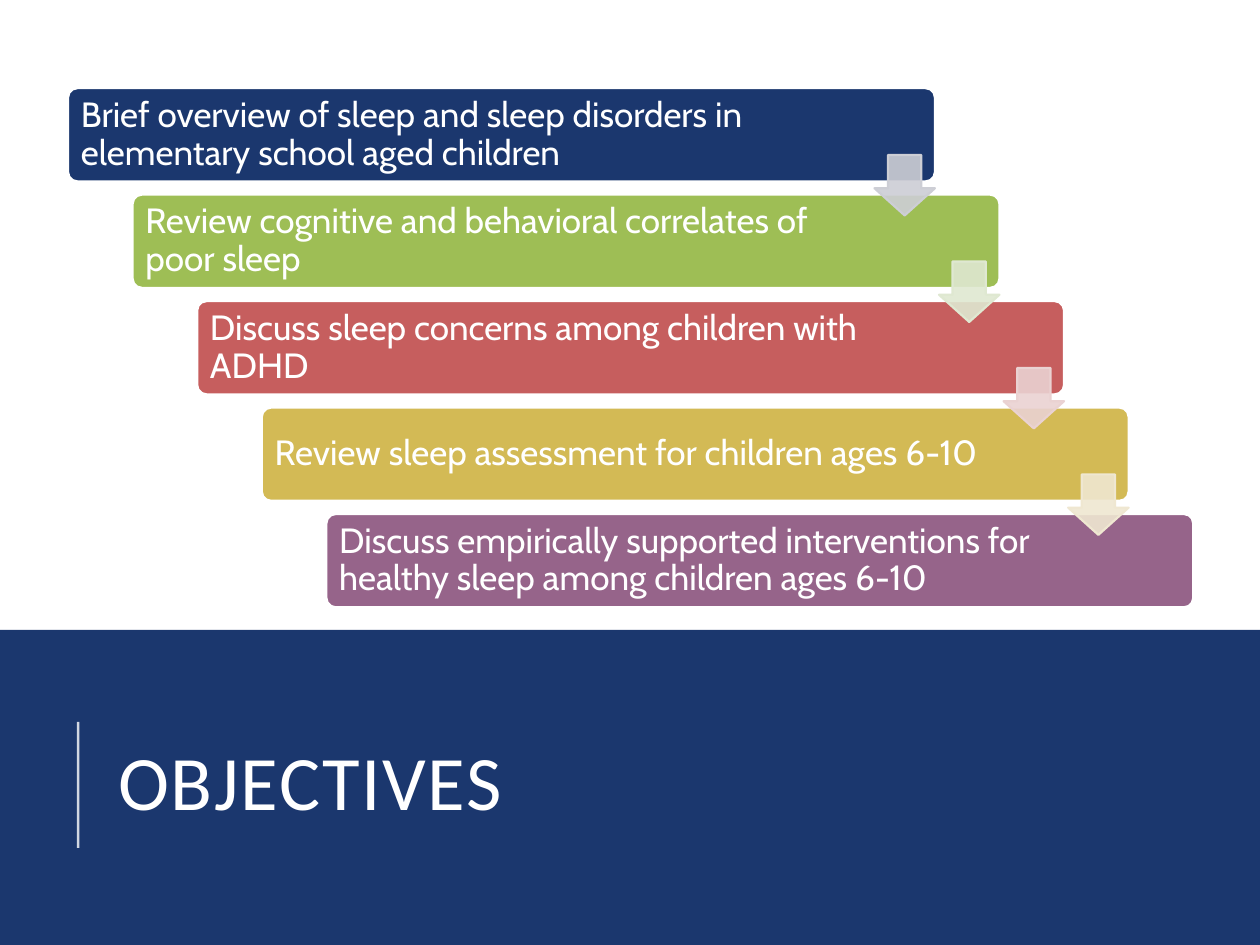
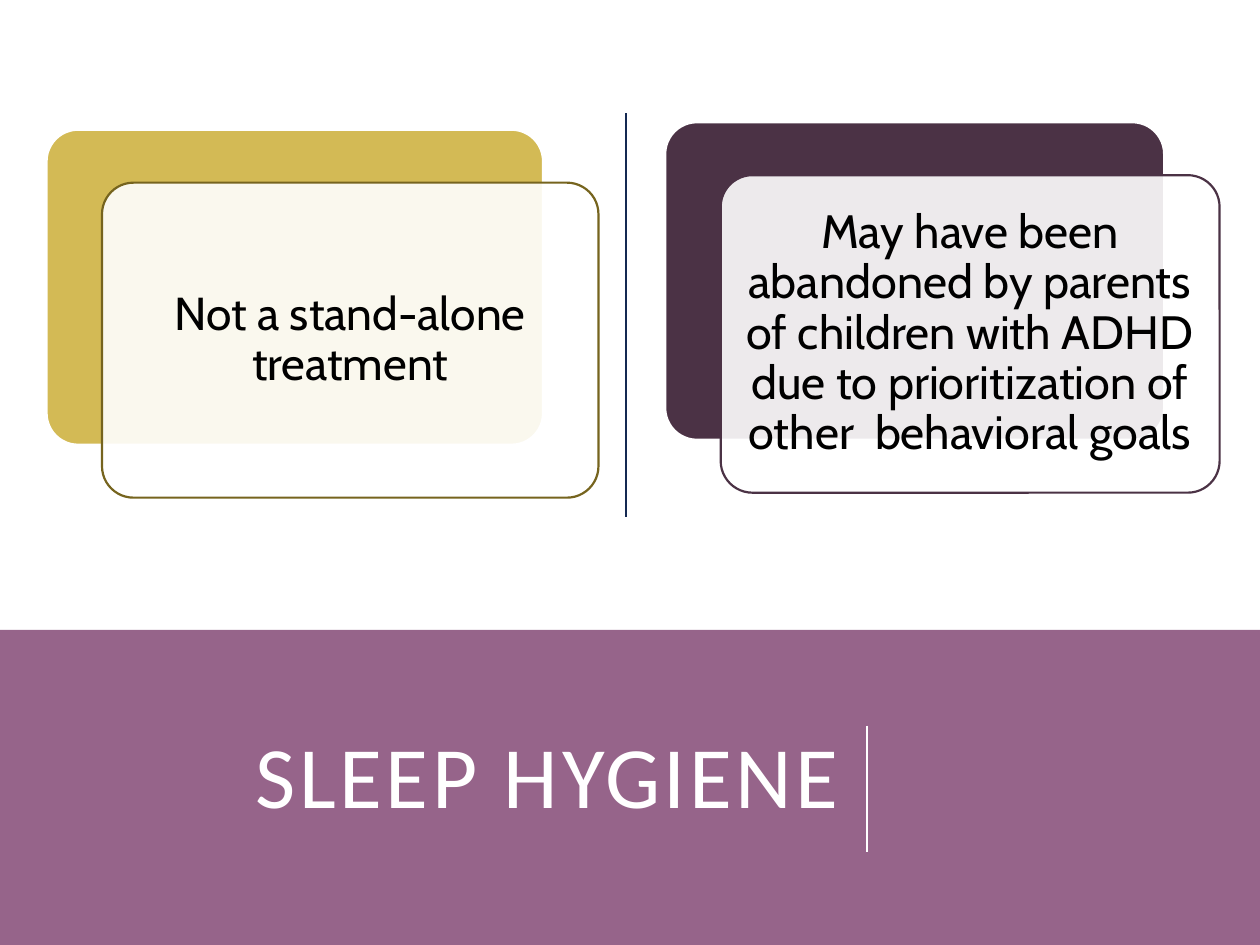
from lxml import etree
from pptx import Presentation
from pptx.dml.color import RGBColor
from pptx.enum.shapes import MSO_CONNECTOR, MSO_SHAPE
from pptx.enum.text import MSO_ANCHOR, PP_ALIGN
from pptx.oxml.ns import qn
from pptx.util import Inches, Pt

RECT, ROUNDED, ARROW = MSO_SHAPE.RECTANGLE, MSO_SHAPE.ROUNDED_RECTANGLE, MSO_SHAPE.DOWN_ARROW
LEFT, CENTER, RIGHT = PP_ALIGN.LEFT, PP_ALIGN.CENTER, PP_ALIGN.RIGHT
MIDDLE = MSO_ANCHOR.MIDDLE
STRAIGHT = MSO_CONNECTOR.STRAIGHT

WHITE, BLACK = "FFFFFF", "000000"
NAVY, DARK_NAVY, GREEN, RED = "1B376E", "142952", "9EBE55", "C65E5E"
GOLD, DARK_GOLD, PURPLE, PLUM = "D3BA55", "76641E", "96648A", "4B3245"
BODY_FONT, TITLE_FONT = "Cabin", "Calibri"
SLIDE_W, SLIDE_H, BAND_TOP = 10, 7.5, 5

# text, bar colour, colour of the arrow to the next step
OBJECTIVES = [
    ("Brief overview of sleep and sleep disorders in elementary school aged children", NAVY, "CDCED5"),
    ("Review cognitive and behavioral correlates of poor sleep", GREEN, "DFE8D1"),
    ("Discuss sleep concerns among children with ADHD", RED, "EAD2D2"),
    ("Review sleep assessment for children ages 6-10", GOLD, "EFE7D1"),
    ("Discuss empirically supported interventions for healthy sleep among children ages 6-10", PURPLE, None),
]
FIRST_BAR, LAST_BAR = (0.54, 0.7), (2.59, 4.08)
BAR_W, BAR_H, ARROW_SIZE = 6.88, 0.74, 0.48

# text, size, left, top, width, height, back colour, outline colour
CARDS = [
    ("Not a stand-alone treatment", 26.4, 0.37, 1.03, 3.94, 2.5, GOLD, DARK_GOLD),
    ("May have been abandoned by parents of children with ADHD due to "
     "prioritization of other  behavioral goals", 26.7, 5.28, 0.97, 3.96, 2.52, PLUM, PLUM),
]
CARD_SHIFT_X, CARD_SHIFT_Y = 0.44, 0.42


def rgb(color):
    return RGBColor.from_string(color)


def set_alpha(fill, percent):
    color = fill._xPr.find(qn("a:solidFill"))[0]
    etree.SubElement(color, qn("a:alpha")).set("val", str(percent * 1000))


def add_box(slide, kind, x, y, w, h, fill, line=None, alpha=100, adjust=()):
    sp = slide.shapes.add_shape(kind, Inches(x), Inches(y), Inches(w), Inches(h))
    sp.shadow.inherit = False
    for i, value in enumerate(adjust):
        sp.adjustments[i] = value
    sp.fill.solid()
    sp.fill.fore_color.rgb = rgb(fill)
    if line:
        sp.line.color.rgb = rgb(line)
        sp.line.width = Pt(1.25)
    else:
        sp.line.fill.background()
    if alpha < 100:
        set_alpha(sp.fill, alpha)
    return sp


def write(sp, text, size, color=WHITE, font=BODY_FONT, align=LEFT, leading=0.9,
          tracking=0, insets=(0.1, 0.05, 0.1, 0.05)):
    """Fill a shape with one paragraph; insets run left, top, right, bottom."""
    tf = sp.text_frame
    tf.word_wrap = True
    tf.vertical_anchor = MIDDLE
    tf.margin_left, tf.margin_top, tf.margin_right, tf.margin_bottom = map(Inches, insets)
    p = tf.paragraphs[0]
    p.alignment = align
    p.line_spacing = leading
    r = p.add_run()
    r.text = text
    r.font.name = font
    r.font.size = Pt(size)
    r.font.color.rgb = rgb(color)
    if tracking:
        r.font._element.set("spc", str(tracking * 100))


def add_rule(slide, x, top, bottom, color, alpha=100):
    line = slide.shapes.add_connector(STRAIGHT, Inches(x), Inches(top), Inches(x), Inches(bottom))
    line.line.color.rgb = rgb(color)
    line.line.width = Pt(1.5)
    if alpha < 100:
        set_alpha(line.line.fill, alpha)
    etree.SubElement(line._element.spPr, qn("a:effectLst"))


def add_title_band(slide, title, color, box, rule_x, rule_top, rule_alpha=100, **style):
    add_box(slide, RECT, 0, BAND_TOP, SLIDE_W, SLIDE_H - BAND_TOP, color)
    write(slide.shapes.add_textbox(*map(Inches, box)), title,
          font=TITLE_FONT, leading=0.8, **style)
    add_rule(slide, rule_x, rule_top, rule_top + 1, WHITE, rule_alpha)


def add_objectives(slide):
    """Staircase of bars, drawn from the bottom so each arrow overlaps the next bar."""
    steps = len(OBJECTIVES) - 1
    for i, (text, color, arrow_color) in reversed(list(enumerate(OBJECTIVES))):
        x, y = (a + (b - a) * i / steps for a, b in zip(FIRST_BAR, LAST_BAR))
        bar = add_box(slide, ROUNDED, x, y, BAR_W, BAR_H, color, WHITE, adjust=[0.1])
        write(bar, text, 20, insets=(0.08, 0.08, 1.08, 0.08))
        if arrow_color:
            add_box(slide, ARROW, x + BAR_W - ARROW_SIZE, y + 0.53, ARROW_SIZE, ARROW_SIZE,
                    arrow_color, arrow_color, alpha=90, adjust=[0.55, 0.45])


def add_cards(slide):
    for text, size, x, y, w, h, back, outline in CARDS:
        add_box(slide, ROUNDED, x, y, w, h, back, WHITE, adjust=[0.1])
        card = add_box(slide, ROUNDED, x + CARD_SHIFT_X, y + CARD_SHIFT_Y, w, h,
                       WHITE, outline, alpha=90, adjust=[0.1])
        write(card, text, size, BLACK, align=CENTER, insets=(0.1,) * 4)


def main():
    prs = Presentation()
    prs.slide_width, prs.slide_height = Inches(SLIDE_W), Inches(SLIDE_H)
    blank = prs.slide_layouts[6]

    s = prs.slides.add_slide(blank)
    add_title_band(s, "OBJECTIVES", NAVY, (0.84, 5.44, 7.97, 1.64), 0.62, 5.73,
                   rule_alpha=80, size=44, tracking=1)
    add_objectives(s)

    s = prs.slides.add_slide(blank)
    add_title_band(s, "SLEEP HYGIENE", PURPLE, (0.38, 5.42, 6.38, 1.6), 6.88, 5.76,
                   size=50, tracking=2, align=RIGHT)
    add_rule(s, 4.97, 0.9, 4.1, DARK_NAVY)
    add_cards(s)

    prs.save("out.pptx")


if __name__ == "__main__":
    main()
